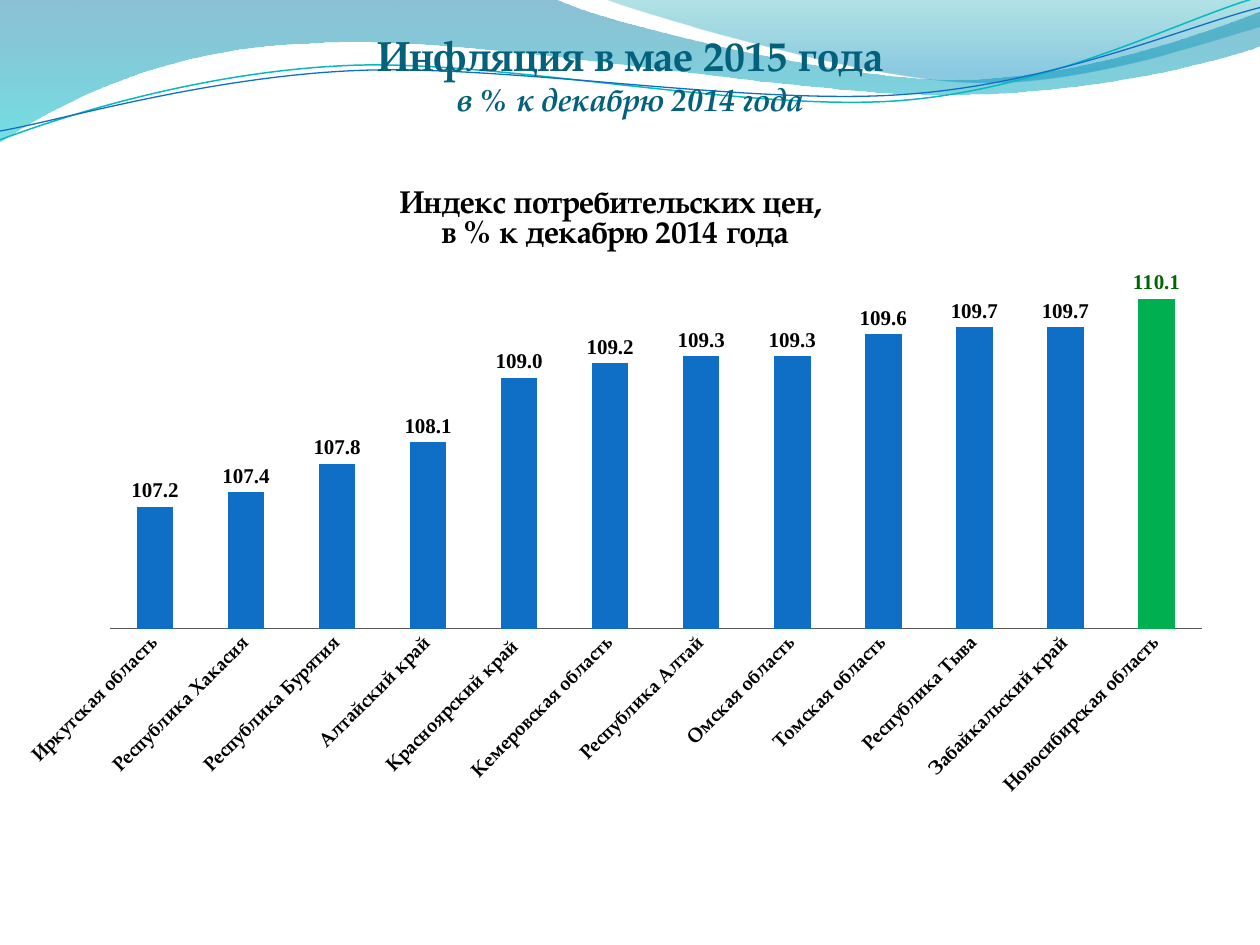
from dataclasses import dataclass

from lxml.etree import SubElement
from pptx import Presentation
from pptx.chart.data import CategoryChartData
from pptx.dml.color import RGBColor
from pptx.enum.chart import XL_CHART_TYPE, XL_LABEL_POSITION, XL_TICK_LABEL_POSITION, XL_TICK_MARK
from pptx.enum.text import MSO_ANCHOR, MSO_AUTO_SIZE, PP_ALIGN
from pptx.oxml import parse_xml
from pptx.oxml.ns import nsdecls, qn
from pptx.util import Inches, Pt


@dataclass(frozen=True)
class Theme:
    font: str = "TeX Gyre Pagella"
    label_font: str = "Times New Roman"
    heading: RGBColor = RGBColor.from_string("04617B")
    text: RGBColor = RGBColor.from_string("000000")
    axis: RGBColor = RGBColor.from_string("595959")
    bar: RGBColor = RGBColor.from_string("0F6FC6")
    highlight: RGBColor = RGBColor.from_string("00B050")
    highlight_label: RGBColor = RGBColor.from_string("006600")
    title_size: Pt = Pt(24)
    subtitle_size: Pt = Pt(18)
    value_size: Pt = Pt(12)
    category_size: Pt = Pt(11)


def add_curve(shapes, start, segments, close=False):
    """Draw cubic segments (six numbers) and straight ones (two), in inches."""
    points = [(Inches(segment[i]), Inches(segment[i + 1]))
              for segment in segments for i in range(0, len(segment), 2)]
    builder = shapes.build_freeform(Inches(start[0]), Inches(start[1]))
    builder.add_line_segments(points, close=close)
    shape = builder.convert_to_shape()
    shape.shadow.inherit = False
    # Gather each three lines of a cubic segment into one Bezier curve
    lines = iter(shape.element.spPr.findall(".//" + qn("a:lnTo")))
    for segment in segments:
        group = [next(lines) for _ in range(len(segment) // 2)]
        if len(group) == 3:
            curve = parse_xml(f'<a:cubicBezTo {nsdecls("a")}/>')
            group[0].addprevious(curve)
            for line in group:
                curve.append(line[0])
                line.getparent().remove(line)
    return shape


def set_layout(parent, tag_before, x, y, size=None):
    """Place a chart part by shares of the chart's size."""
    for old in parent.findall(qn("c:layout")):
        parent.remove(old)
    parts = [("xMode", "edge"), ("yMode", "edge"), ("x", x), ("y", y)]
    if size:
        parts = [("layoutTarget", "inner")] + parts + [("w", size[0]), ("h", size[1])]
    values = "".join(f'<c:{name} val="{value}"/>' for name, value in parts)
    layout = parse_xml(f'<c:layout {nsdecls("c")}><c:manualLayout>{values}'
                       '</c:manualLayout></c:layout>')
    if tag_before:
        parent.find(qn(tag_before)).addnext(layout)
    else:
        parent.insert(0, layout)


theme = Theme()
presentation = Presentation()
presentation.slide_width, presentation.slide_height = Inches(10), Inches(7.5)
column, row = presentation.slide_width / 100, presentation.slide_height / 100
slide = presentation.slides.add_slide(presentation.slide_layouts[5])

# Translucent waves: start, segments, gradient stops (position, colour, opacity in %)
waves = [
    ((0, 0), [(4.4, -0.01), (4.76, 0.17, 6.64, 0.63, 7.58, 0.63),
              (8.53, 0.63, 9.58, 0.26, 10, 0.09), (10.01, 0.36),
              (9.83, 0.44, 8.7, 0.76, 7.46, 0.75), (6.22, 0.75, 3.82, 0.28, 2.57, 0.34),
              (1.29, 0.36, 0.46, 0.83, -0.01, 1.13)],
     [(0, "0074A1", 45), (1, "00C6CF", 55)]),
    ((4.79, -0.01), [(5.09, 0.11, 6.82, 0.62, 7.69, 0.65),
                     (8.56, 0.69, 9.61, 0.32, 10, 0.21), (10, 0)],
     [(0, "00A1A9", 30), (0.8, "008BBF", 45)]),
]
for start, segments, stops in waves:
    wave = add_curve(slide.shapes, start, segments, close=True)
    wave.line.fill.background()
    wave.fill.gradient()
    wave.fill.gradient_angle = 270
    for stop, (position, colour, _) in zip(wave.fill.gradient_stops, stops):
        stop.position = position
        stop.color.rgb = RGBColor.from_string(colour)
    colours = wave.element.spPr.findall(".//" + qn("a:srgbClr"))
    for colour, (_, _, opacity) in zip(colours, stops):
        SubElement(colour, qn("a:alpha"), val=str(opacity * 1000))

# Thin lines along the waves
strands = [
    ((0, 1.11), [(0.48, 0.93, 1.58, 0.57, 2.77, 0.52), (3.95, 0.47, 5.93, 0.89, 7.13, 0.8),
                 (8.33, 0.71, 9.38, 0.15, 9.98, -0.02)], "0AB8BF", 0.85),
    ((0, 1.04), [(0.47, 0.96, 1.64, 0.61, 2.83, 0.56), (4.03, 0.51, 5.97, 0.84, 7.17, 0.75),
                 (8.36, 0.67, 9.41, 0.21, 10, 0.06)], "0F6FC6", 0.75),
]
for start, segments, colour, weight in strands:
    strand = add_curve(slide.shapes, start, segments)
    strand.fill.background()
    strand.line.color.rgb = RGBColor.from_string(colour)
    strand.line.width = Pt(weight)

# Title, in front of the waves
title = slide.shapes.title
title.element.getparent().append(title.element)
title.left, title.top = int(2 * column), int(2.5 * row)
title.width, title.height = int(96 * column), int(10.8 * row)
frame = title.text_frame
frame.word_wrap = True
frame.auto_size = MSO_AUTO_SIZE.SHAPE_TO_FIT_TEXT
frame.vertical_anchor = MSO_ANCHOR.TOP
frame.text = "Инфляция в мае 2015 года\nв % к декабрю 2014 года"
for paragraph, size, italic in zip(frame.paragraphs, (theme.title_size, theme.subtitle_size),
                                   (False, True)):
    paragraph.alignment = PP_ALIGN.CENTER
    paragraph.space_before = Pt(0)
    paragraph.font.name, paragraph.font.size = theme.font, size
    paragraph.font.bold, paragraph.font.italic = True, italic
    paragraph.font.color.rgb = theme.heading

# Price index by region
prices = {
    "Иркутская область": 107.2, "Республика Хакасия": 107.4, "Республика Бурятия": 107.8,
    "Алтайский край": 108.1, "Красноярский край ": 109.0, "Кемеровская область": 109.2,
    "Республика Алтай": 109.3, "Омская область": 109.3, "Томская область": 109.6,
    "Республика Тыва": 109.7, "Забайкальский край": 109.7, "Новосибирская область": 110.1,
}
chart_data = CategoryChartData(number_format="0.0")
chart_data.categories = list(prices)
chart_data.add_series("Series 1", list(prices.values()))
graphic = slide.shapes.add_chart(
    XL_CHART_TYPE.COLUMN_CLUSTERED, int(0.4 * column), int(17.5 * row),
    int(96.9 * column), int(68.3 * row), chart_data)
chart = graphic.chart
chart.has_legend = False
chart.font.name, chart.font.size, chart.font.color.rgb = theme.font, Pt(10), theme.text
chart_title = chart.chart_title
chart_title.text_frame.text = "Индекс потребительских цен, \nв % к декабрю 2014 года"
for paragraph in chart_title.text_frame.paragraphs:
    paragraph.alignment = PP_ALIGN.CENTER
    paragraph.font.name, paragraph.font.size = theme.font, theme.subtitle_size
    paragraph.font.bold, paragraph.font.color.rgb = True, theme.text
chart_title.include_in_layout = False
set_layout(chart.element.find(".//" + qn("c:title")), "c:tx", 0.32, 0.03)
plot_x, plot_width = (Inches(size) / graphic.width for size in (0.83, 8.67))
plot_y, plot_height = (Inches(size) / graphic.height for size in (0.83, 2.85))
set_layout(chart.element.find(".//" + qn("c:plotArea")), None,
           plot_x, plot_y, (plot_width, plot_height))

# Axes
value_axis, category_axis = chart.value_axis, chart.category_axis
value_axis.minimum_scale, value_axis.maximum_scale = 105.5, 110.5
value_axis.has_major_gridlines = False
value_axis.visible = False
category_axis.major_tick_mark = XL_TICK_MARK.NONE
category_axis.minor_tick_mark = XL_TICK_MARK.NONE
category_axis.tick_label_position = XL_TICK_LABEL_POSITION.NEXT_TO_AXIS
category_axis.format.line.color.rgb = theme.axis
category_axis.format.line.width = Pt(0.5)
category_font = category_axis.tick_labels.font
category_font.name, category_font.size, category_font.bold = theme.font, theme.category_size, True
category_font.color.rgb = theme.text
category_axis.tick_labels.offset = 0
category_axis._element.find(qn("c:txPr")).find(qn("a:bodyPr")).set("rot", "-2700000")

# Columns and value labels, with the last region highlighted
plot = chart.plots[0]
plot.gap_width, plot.overlap, plot.vary_by_categories = 150, -25, False
series = plot.series[0]
series.format.fill.solid()
series.format.fill.fore_color.rgb = theme.bar
last = series.points[len(prices) - 1]
last.format.fill.solid()
last.format.fill.fore_color.rgb = theme.highlight
labels = series.data_labels
labels.show_value = True
labels.number_format, labels.number_format_is_linked = "0.0", False
for label, colour in ((labels, theme.text), (last.data_label, theme.highlight_label)):
    label.position = XL_LABEL_POSITION.OUTSIDE_END
    label.font.name, label.font.size, label.font.bold = theme.label_font, theme.value_size, True
    label.font.color.rgb = colour

presentation.save("out.pptx")
